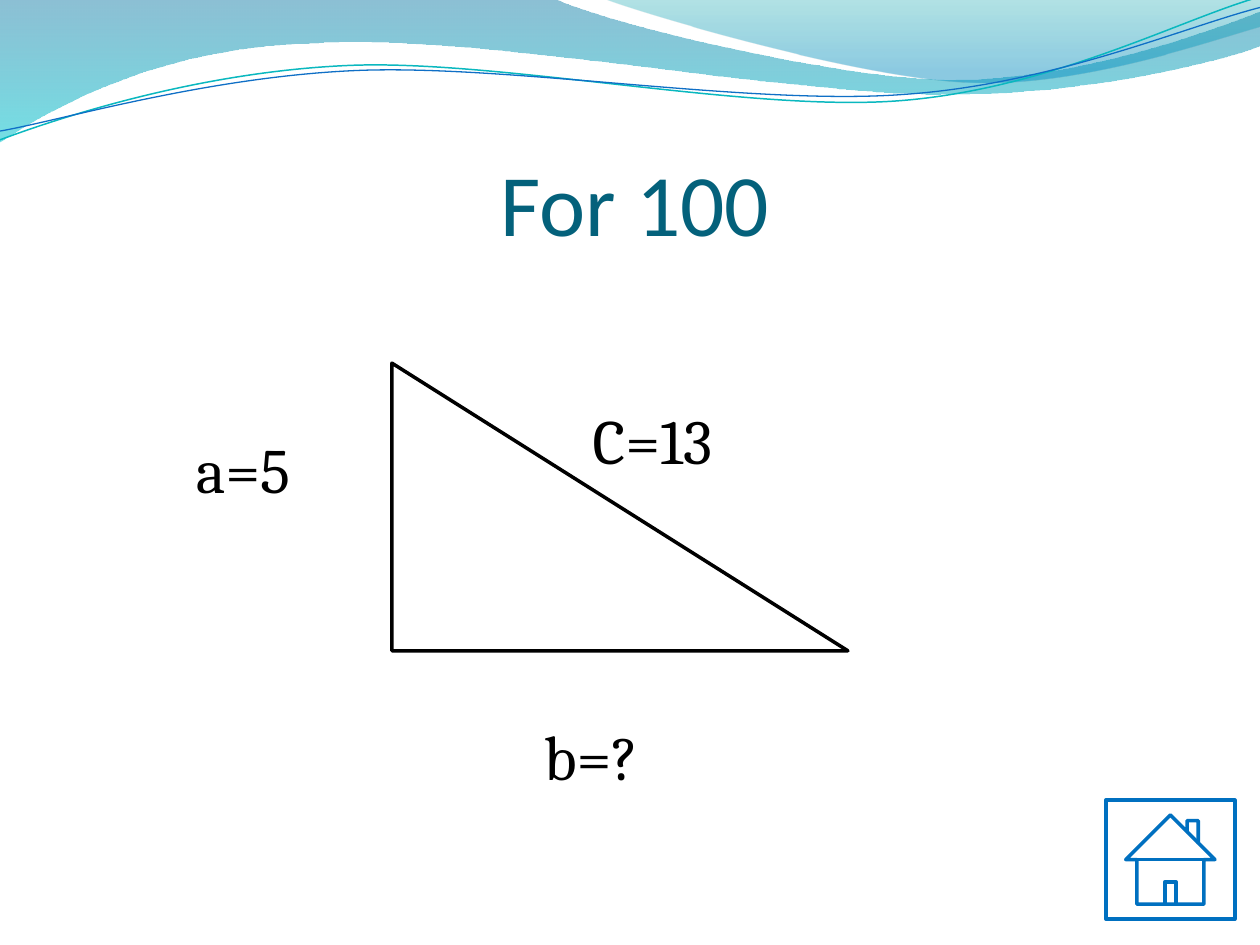
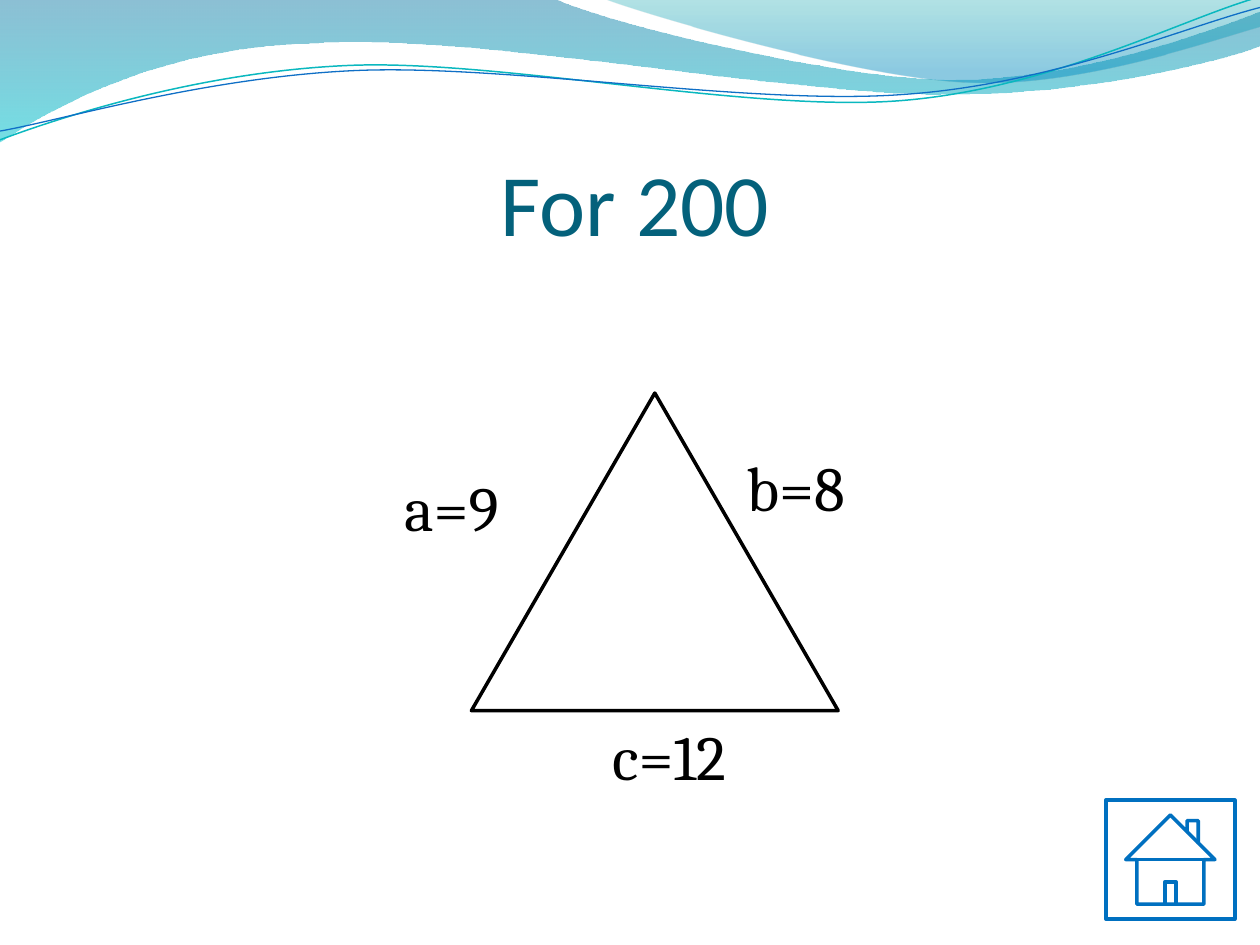
import math
from dataclasses import dataclass

import pptx
import pptx.dml.color
import pptx.enum.shapes
import pptx.enum.text
import pptx.oxml
import pptx.util

Pt = pptx.util.Pt
SHAPE = pptx.enum.shapes.MSO_SHAPE
Point = tuple[float, float]
Box = tuple[float, float, float, float]

COLORS = {
    "title": "04617B",
    "ink": "000000",
    "home": "0070C0",
    "deep": "0074A1",
    "aqua": "00C6CF",
    "teal": "00A1A9",
    "sky": "008BBF",
    "line_teal": "0AB8BF",
    "line_blue": "0F6FC6",
}
TITLE_BOX = (36, 55.4, 653.8, 90)
HOME_BOX = (632, 457.2, 73.6, 68)
LABEL_HEIGHT = 51.1
STRAND_TILT = 357.3


@dataclass
class Stop:
    position: float
    color: str
    opacity: int


@dataclass
class Band:
    start: Point
    segments: list[tuple[Point, ...]]
    stops: tuple[Stop, Stop]


@dataclass
class Strand:
    start: Point
    segments: list[tuple[Point, ...]]
    center: Point
    color: str
    weight: float


@dataclass
class Label:
    text: str
    left: float
    top: float
    width: float


@dataclass
class Question:
    title: str
    triangle: SHAPE
    box: Box
    labels: list[Label]


WAVES = [
    Band((0, 0), [
        ((316.8, -0.7),),
        ((342.7, 12.2), (478.1, 45.4), (545.8, 45.4)),
        ((614.2, 45.4), (689.8, 18.7), (720, 6.5)),
        ((720.7, 25.9),),
        ((707.8, 31.7), (626.4, 54.7), (537.1, 54)),
        ((447.8, 54), (275, 20.2), (185, 24.5)),
        ((92.9, 25.9), (33.1, 59.8), (-0.7, 81.4)),
        ((0, 0),),
    ], (Stop(0, "deep", 45), Stop(1, "aqua", 55))),
    Band((344.9, -0.7), [
        ((366.5, 7.9), (491, 44.6), (553.7, 46.8)),
        ((616.3, 49.7), (691.9, 23), (720, 15.1)),
        ((720, 0),),
        ((344.9, -0.7),),
    ], (Stop(0, "teal", 30), Stop(0.8, "sky", 45))),
    Strand((0, 79.9), [
        ((34.6, 67), (113.8, 41), (199.4, 37.4)),
        ((284.4, 33.8), (427, 64.1), (513.4, 57.6)),
        ((599.8, 51.1), (675.4, 10.8), (718.6, -1.4)),
    ], (359.3, 41.4), "line_teal", 0.85),
    Strand((0, 74.9), [
        ((33.8, 69.1), (118.1, 43.9), (203.8, 40.3)),
        ((290.2, 36.7), (429.8, 60.5), (516.2, 54)),
        ((601.9, 48.2), (677.5, 15.1), (720, 4.3)),
    ], (359.6, 42.5), "line_blue", 0.75),
]

QUESTIONS = [
    Question("For 100", SHAPE.RIGHT_TRIANGLE, (223.9, 207.5, 260.6, 164.4), [
        Label("a=5", 104.8, 242.6, 130.3),
        Label("b=?", 303.8, 406.4, 118.1),
        Label("C=13", 331.6, 226.1, 124.6),
    ]),
    Question("For 200", SHAPE.ISOSCELES_TRIANGLE, (269.4, 224.6, 209.6, 181.5), [
        Label("c=12", 342.7, 406.5, 158.4),
        Label("a=9", 223.9, 264.4, 90.7),
        Label("b=8", 419.5, 252.7, 110.2),
    ]),
]


def rgb(name: str) -> pptx.dml.color.RGBColor:
    return pptx.dml.color.RGBColor.from_string(COLORS[name])


def turn(point: Point, center: Point, degrees: float) -> Point:
    angle = math.radians(degrees)
    dx, dy = point[0] - center[0], point[1] - center[1]
    return (center[0] + dx * math.cos(angle) - dy * math.sin(angle),
            center[1] + dx * math.sin(angle) + dy * math.cos(angle))


def bend_segments(sp, segments: list[tuple[Point, ...]]) -> None:
    lines = iter(sp.element.xpath(".//a:path/a:lnTo"))
    for segment in segments:
        first, *others = [next(lines) for _ in segment]
        if others:
            curve = pptx.oxml.xmlchemy.OxmlElement("a:cubicBezTo")
            first.addprevious(curve)
            for line in (first, *others):
                curve.append(line[0])
                line.getparent().remove(line)


def fill_gradient(sp, stops: tuple[Stop, Stop]) -> None:
    sp.fill.gradient()
    sp.fill.gradient_angle = 270
    for gradient_stop, stop in zip(sp.fill.gradient_stops, stops):
        gradient_stop.position = stop.position
        gradient_stop.color.rgb = rgb(stop.color)
    for clr, stop in zip(sp.element.xpath(".//a:gs/a:srgbClr"), stops):
        alpha = pptx.oxml.xmlchemy.OxmlElement("a:alpha")
        alpha.set("val", str(stop.opacity * 1000))
        clr.append(alpha)


def style_line(sp, color: str, weight: float) -> None:
    sp.shadow.inherit = False
    sp.fill.background()
    sp.line.color.rgb = rgb(color)
    sp.line.width = Pt(weight)


def draw_wave(s, wave: Band | Strand):
    closed = isinstance(wave, Band)
    points = [wave.start, *(point for segment in wave.segments for point in segment)]
    if not closed:
        points = [turn(point, wave.center, -STRAND_TILT) for point in points]
    start, *others = [(Pt(x), Pt(y)) for x, y in points]
    builder = s.shapes.build_freeform(*start)
    builder.add_line_segments(others, close=closed)
    sp = builder.convert_to_shape()
    bend_segments(sp, wave.segments)
    if closed:
        sp.shadow.inherit = False
        fill_gradient(sp, wave.stops)
        sp.line.fill.background()
    else:
        sp.rotation = STRAND_TILT
        style_line(sp, wave.color, wave.weight)
    return sp


def move_waves_to_layout(s, layout) -> None:
    for number, wave in enumerate(WAVES, start=101):
        sp = draw_wave(s, wave)
        sp.element.xpath("./p:nvSpPr/p:cNvPr")[0].set("id", str(number))
        layout.shapes.element.append(sp.element)


def add_run(p, text: str, font: str, size: float, color: str) -> None:
    r = p.add_run()
    r.text = text
    r.font.name = font
    r.font.size = Pt(size)
    r.font.color.rgb = rgb(color)


def set_title(s, text: str) -> None:
    sp = s.shapes.title
    sp.left, sp.top, sp.width, sp.height = map(Pt, TITLE_BOX)
    tf = sp.text_frame
    tf.auto_size = pptx.enum.text.MSO_AUTO_SIZE.NONE
    tf.vertical_anchor = pptx.enum.text.MSO_ANCHOR.BOTTOM
    tf.margin_left = tf.margin_right = tf.margin_bottom = Pt(0)
    tf.margin_top = Pt(3.6)
    p = tf.paragraphs[0]
    p.alignment = pptx.enum.text.PP_ALIGN.CENTER
    add_run(p, text, "Calibri", 50, "title")


def add_outline_shape(s, kind: SHAPE, box: Box, color: str) -> None:
    sp = s.shapes.add_shape(kind, *map(Pt, box))
    style_line(sp, color, 2)


def add_label(s, label: Label) -> None:
    sp = s.shapes.add_textbox(Pt(label.left), Pt(label.top), Pt(label.width), Pt(LABEL_HEIGHT))
    tf = sp.text_frame
    tf.word_wrap = True
    tf.auto_size = pptx.enum.text.MSO_AUTO_SIZE.SHAPE_TO_FIT_TEXT
    add_run(tf.paragraphs[0], label.text, "Cambria", 36, "ink")


def add_question(s, question: Question) -> None:
    set_title(s, question.title)
    add_outline_shape(s, SHAPE.ACTION_BUTTON_HOME, HOME_BOX, "home")
    add_outline_shape(s, question.triangle, question.box, "ink")
    for label in question.labels:
        add_label(s, label)


def main() -> None:
    prs = pptx.Presentation()
    prs.slide_width, prs.slide_height = Pt(720), Pt(540)
    layout = prs.slide_layouts.get_by_name("Title Only")
    slides = [prs.slides.add_slide(layout) for _ in QUESTIONS]
    move_waves_to_layout(slides[0], layout)
    for s, question in zip(slides, QUESTIONS):
        add_question(s, question)
    prs.save("out.pptx")


if __name__ == "__main__":
    main()
